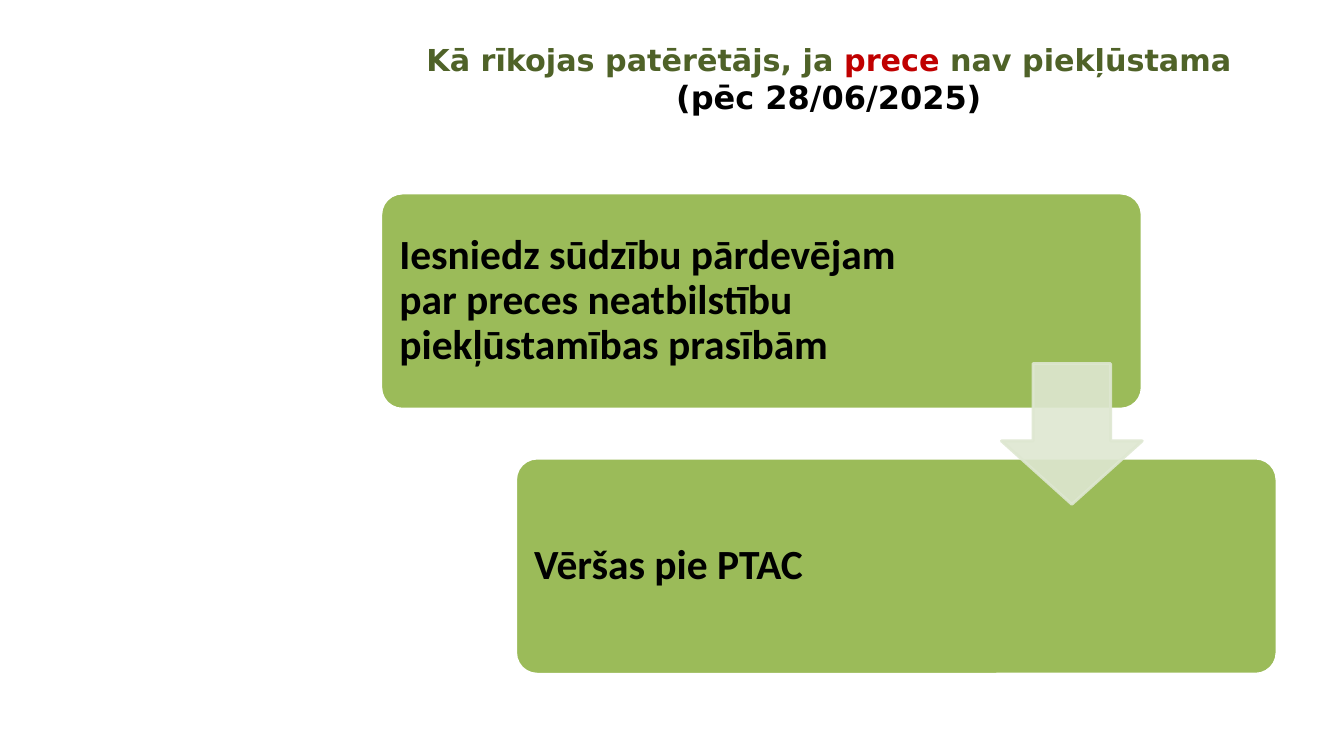
from lxml import etree
from pptx import Presentation
from pptx import util as u
from pptx.dml import color
from pptx.enum import shapes, text
from pptx.oxml import ns

Pt = u.Pt
FORM = shapes.MSO_SHAPE
SIDE = text.PP_ALIGN
HOLD = text.MSO_ANCHOR


def rgb(code):
    return color.RGBColor.from_string(code)


class Deck:
    """Draws the steps of the complaint route on one slide."""

    green, pale, white, black = "9BBB59", "DEE7D1", "FFFFFF", "000000"
    dark, red = "4F6228", "C00000"
    head, body = "DejaVu Sans", "Calibri"

    def __init__(self, wide, high):
        self.show = Presentation()
        self.show.slide_width, self.show.slide_height = Pt(wide), Pt(high)
        self.slide = self.show.slides.add_slide(self.show.slide_layouts[6])

    def shape(self, form, box, fill, line, adjust, alpha=None):
        item = self.slide.shapes.add_shape(form, *map(Pt, box))
        item.shadow.inherit = False
        for spot, value in enumerate(adjust):
            item.adjustments[spot] = value
        item.fill.solid()
        item.fill.fore_color.rgb = rgb(fill)
        item.line.color.rgb = rgb(line)
        item.line.width = Pt(2)
        if alpha:
            for tint in item.element.spPr.iter(ns.qn("a:srgbClr")):
                etree.SubElement(tint, ns.qn("a:alpha")).set("val", str(alpha * 1000))

    def label(self, box, lines, font, inset=0, side=SIDE.LEFT, hold=HOLD.TOP, space=1.0):
        frame = self.slide.shapes.add_textbox(*map(Pt, box)).text_frame
        frame.word_wrap = True
        frame.vertical_anchor = hold
        frame.margin_left = frame.margin_right = Pt(inset)
        frame.margin_top = frame.margin_bottom = Pt(inset)
        for spot, runs in enumerate(lines):
            para = frame.add_paragraph() if spot else frame.paragraphs[0]
            para.alignment = side
            para.line_spacing = space
            for words, size, ink in runs:
                run = para.add_run()
                run.text = words
                run.font.name = font
                run.font.size = Pt(size)
                run.font.bold = True
                run.font.color.rgb = rgb(ink)

    def title(self, box, lines):
        self.label(box, lines, self.head, side=SIDE.CENTER)

    def card(self, left, top, width, words):
        self.shape(FORM.ROUNDED_RECTANGLE, (left, top, 514, 146), self.green, self.white, [0.1])
        self.label((left + 4, top + 4, width, 138), [[(words, 28, self.black)]],
                   self.body, inset=8.6, hold=HOLD.MIDDLE, space=0.9)

    def arrow(self, box):
        self.shape(FORM.DOWN_ARROW, box, self.pale, self.pale, [0.55, 0.45], alpha=90)


def main():
    deck = Deck(907.2, 510.5)
    deck.title((257, 28, 605, 77), [
        [("Kā rīkojas patērētājs, ja ", 20.4, deck.dark), ("prece", 20.4, deck.red),
         (" nav piekļūstama", 20.4, deck.dark)],
        [("(pēc 28/06/2025)", 21.6, deck.black)],
    ])
    steps = [
        ("Iesniedz sūdzību pārdevējam par preces neatbilstību piekļūstamības prasībām", 363),
        ("Vēršas pie PTAC", 320),
    ]
    for spot, (words, width) in enumerate(steps):
        deck.card(257 + 91 * spot, 130.3 + 179 * spot, width, words)
    deck.arrow((676, 245.5, 95, 95))
    deck.show.save("out.pptx")


if __name__ == "__main__":
    main()
